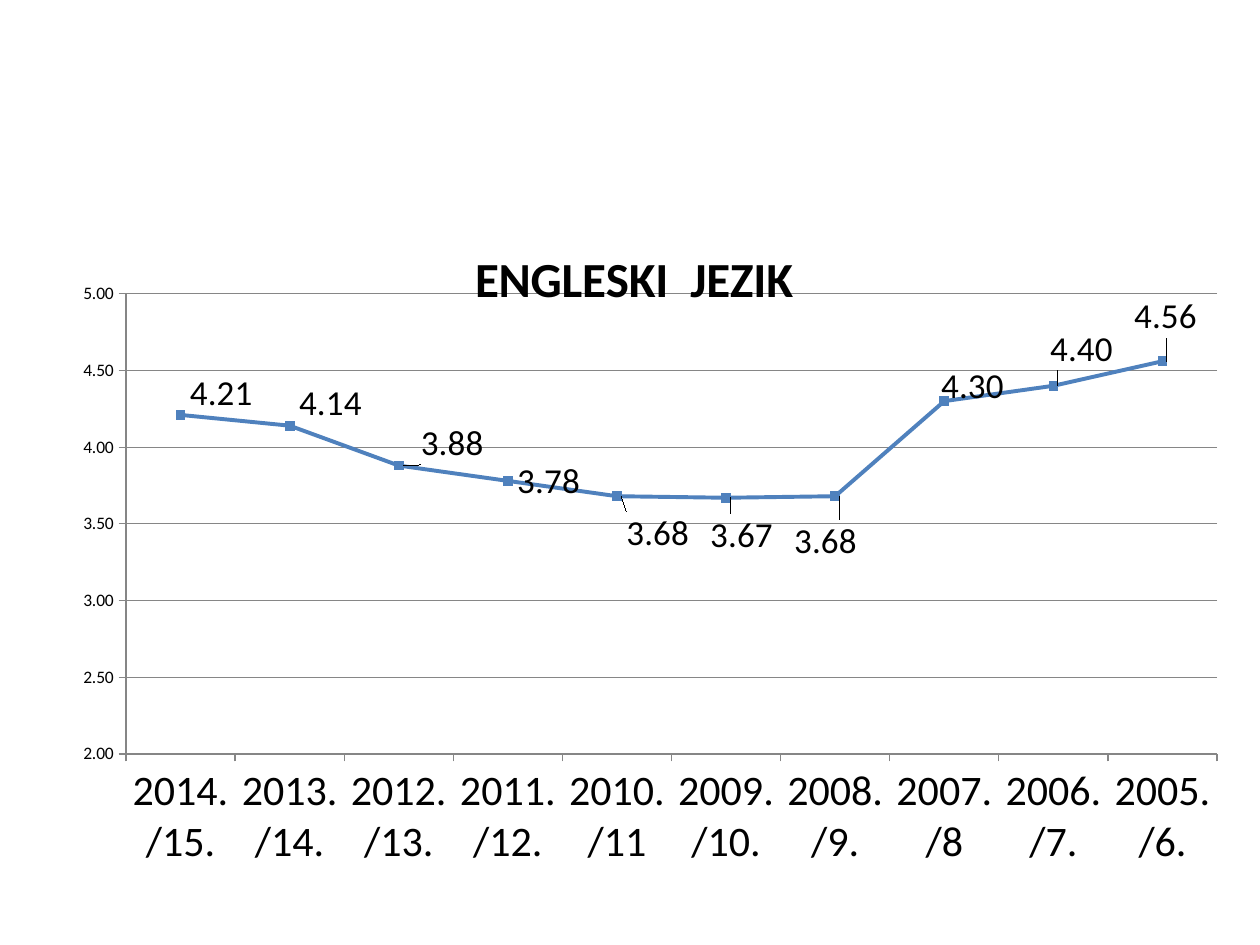
from dataclasses import dataclass

from lxml import etree
from pptx import Presentation
from pptx.chart.data import CategoryChartData
from pptx.dml.color import RGBColor
from pptx.enum.chart import XL_CHART_TYPE, XL_LABEL_POSITION, XL_TICK_MARK
from pptx.oxml.ns import qn
from pptx.util import Inches, Pt

LINE_STACKED = XL_CHART_TYPE.LINE_STACKED
LABEL_RIGHT = XL_LABEL_POSITION.RIGHT
TICK_OUTSIDE = XL_TICK_MARK.OUTSIDE
BLANK_LAYOUT = 6

# School year, average grade, label shift (x, y) as a share of the chart
GRADES = [
    ("2014./15.", 4.21, (0, -0.03)),
    ("2013./14.", 4.14, (0, -0.03)),
    ("2012./13.", 3.88, (0.01, -0.03)),
    ("2011./12.", 3.78, (0, 0)),
    ("2010./11", 3.68, (0, 0.05)),
    ("2009./10.", 3.67, (-0.02, 0.05)),
    ("2008./9.", 3.68, (-0.04, 0.06)),
    ("2007./8", 4.30, (-0.01, -0.02)),
    ("2006./7.", 4.40, (-0.01, -0.05)),
    ("2005./6.", 4.56, (-0.03, -0.06)),
]


@dataclass(frozen=True)
class Theme:
    font: str = "Calibri"
    text: RGBColor = RGBColor(0x00, 0x00, 0x00)
    series: RGBColor = RGBColor(0x4F, 0x81, 0xBD)
    grid: RGBColor = RGBColor(0x86, 0x86, 0x86)
    title_size: int = 28
    category_size: int = 24
    label_size: int = 20
    value_size: int = 10


def manual_layout(**settings):
    """Return a c:layout element; settings must follow schema order."""
    layout = etree.Element(qn("c:layout"))
    manual = etree.SubElement(layout, qn("c:manualLayout"))
    for tag, value in settings.items():
        etree.SubElement(manual, qn(f"c:{tag}")).set("val", str(value))
    return layout


def set_layout(parent, layout, after=None):
    """Replace the layout of a chart part, placing it behind the given child."""
    for old in parent.findall(qn("c:layout")):
        parent.remove(old)
    previous = None if after is None else parent.find(qn(after))
    if previous is None:
        parent.insert(0, layout)
    else:
        previous.addnext(layout)


class SlideBuilder:
    def __init__(self, slide, theme):
        self.slide = slide
        self.theme = theme

    def style_font(self, font, size, bold=False):
        font.name = self.theme.font
        font.size = Pt(size)
        font.bold = bold
        font.color.rgb = self.theme.text

    def style_line(self, line, color, width):
        line.color.rgb = color
        line.width = Pt(width)

    def add_line_chart(self, title, rows, left, top, width, height):
        data = CategoryChartData(number_format="0.00")
        data.categories = [year for year, _, _ in rows]
        data.add_series("Series 1", [grade for _, grade, _ in rows])
        chart = self.slide.shapes.add_chart(
            LINE_STACKED, Inches(left), Inches(top), Inches(width), Inches(height), data
        ).chart
        chart.has_legend = False
        self.style_font(chart.font, self.theme.value_size)
        self.add_chart_title(chart, title)
        self.style_axes(chart)
        self.style_series(chart.plots[0], [shift for _, _, shift in rows])
        plot_area = chart.element.find(".//" + qn("c:plotArea"))
        set_layout(plot_area, manual_layout(
            layoutTarget="inner", xMode="edge", yMode="edge",
            x=0.1, y=0.127, w=0.866, h=0.617))

    def add_chart_title(self, chart, title):
        chart.has_title = True
        run = chart.chart_title.text_frame.paragraphs[0].add_run()
        run.text = title
        self.style_font(run.font, self.theme.title_size, bold=True)
        title_element = chart.element.find(".//" + qn("c:title"))
        set_layout(title_element, manual_layout(
            xMode="edge", yMode="edge", x=0.37, y=0.05), after="c:tx")

    def style_axes(self, chart):
        years, grades = chart.category_axis, chart.value_axis
        for axis, size in ((years, self.theme.category_size),
                           (grades, self.theme.value_size)):
            axis.major_tick_mark = TICK_OUTSIDE
            self.style_font(axis.tick_labels.font, size)
            self.style_line(axis.format.line, self.theme.grid, 0.75)
        years.has_major_gridlines = False
        grades.has_major_gridlines = True
        self.style_line(grades.major_gridlines.format.line, self.theme.grid, 0.75)
        grades.minimum_scale, grades.maximum_scale = 2, 5
        grades.major_unit = 0.5
        grades.tick_labels.number_format = "0.00"
        grades.tick_labels.number_format_is_linked = False

    def style_series(self, plot, label_shifts):
        plot.vary_by_categories = False
        series = plot.series[0]
        series.smooth = False
        series.marker.style = None
        self.style_line(series.format.line, self.theme.series, 2.25)
        labels = series.data_labels
        labels.show_value = True
        labels.number_format = "0.00"
        labels.number_format_is_linked = False
        labels.position = LABEL_RIGHT
        self.style_font(labels.font, self.theme.label_size)
        for index in range(len(label_shifts)):
            label = series.points[index].data_label
            label.position = LABEL_RIGHT
            self.style_font(label.font, self.theme.label_size)
        label_elements = plot.series[0].data_labels._element.findall(qn("c:dLbl"))
        for element, (x, y) in zip(label_elements, label_shifts):
            set_layout(element, manual_layout(x=x, y=y), after="c:idx")


def main():
    presentation = Presentation()
    presentation.slide_width = Inches(10)
    presentation.slide_height = Inches(7.5)
    slide = presentation.slides.add_slide(presentation.slide_layouts[BLANK_LAYOUT])
    builder = SlideBuilder(slide, Theme())
    builder.add_line_chart("ENGLESKI  JEZIK", GRADES, 0, 1.58, 10, 5.92)
    presentation.save("out.pptx")


if __name__ == "__main__":
    main()
